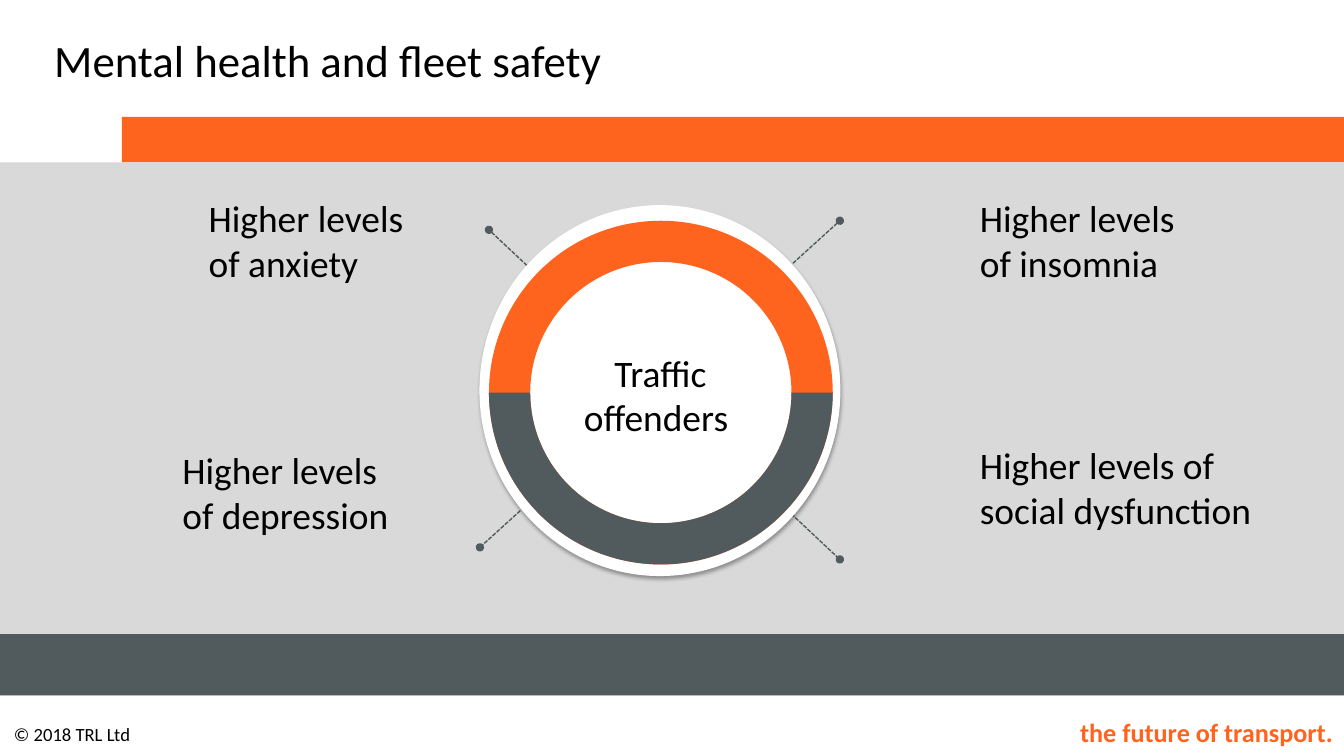
from lxml import etree
from pptx import Presentation
from pptx.dml.color import RGBColor
from pptx.enum.dml import MSO_LINE
from pptx.enum.shapes import MSO_CONNECTOR, MSO_SHAPE
from pptx.enum.text import MSO_ANCHOR, PP_ALIGN
from pptx.oxml import parse_xml
from pptx.oxml.ns import nsdecls, qn
from pptx.util import Inches, Pt

COLORS = {"orange": "FF641E", "slate": "515B5E", "grey": "D9D9D9",
          "white": "FFFFFF", "black": "000000"}

presentation = Presentation()
presentation.slide_width = Inches(13.33)
presentation.slide_height = Inches(7.5)
slide = presentation.slides.add_slide(presentation.slide_layouts[6])
percent_x = presentation.slide_width / 100
percent_y = presentation.slide_height / 100


def add_filled(kind, color, left, top, width, height):
    shape = slide.shapes.add_shape(
        kind, int(left * percent_x), int(top * percent_y),
        int(width * percent_x), int(height * percent_y))
    shape.shadow.inherit = False
    shape.fill.solid()
    shape.fill.fore_color.rgb = RGBColor.from_string(COLORS[color])
    shape.line.fill.background()
    return shape


def add_text(text, left, top, width, height, size=26.7, color="black",
             align=PP_ALIGN.LEFT, anchor=MSO_ANCHOR.TOP, bold=False):
    box = slide.shapes.add_textbox(
        int(left * percent_x), int(top * percent_y),
        int(width * percent_x), int(height * percent_y))
    frame = box.text_frame
    frame.word_wrap = True
    frame.vertical_anchor = anchor
    paragraph = frame.paragraphs[0]
    paragraph.text = text
    paragraph.alignment = align
    paragraph.font.name = "Calibri"
    paragraph.font.size = Pt(size)
    paragraph.font.bold = bold
    paragraph.font.color.rgb = RGBColor.from_string(COLORS[color])


add_text("the future of transport.", 78.17, 94.13, 21.76, 5.6, size=18.7,
         color="orange", align=PP_ALIGN.RIGHT, bold=True)
add_text("© 2018 TRL Ltd", 0.3, 94.93, 16.35, 4.4, size=13.3,
         anchor=MSO_ANCHOR.MIDDLE)

for color, left, top, height in [("orange", 9.08, 15.47, 6),
                                 ("grey", 0, 21.47, 70.53),
                                 ("slate", 0, 83.87, 8.13)]:
    add_filled(MSO_SHAPE.RECTANGLE, color, left, top, 100 - left, height)

add_text("Mental health and fleet safety", 3.3, 1.87, 74.87, 12, size=32,
         anchor=MSO_ANCHOR.MIDDLE)

for start_x, start_y, end_x, end_y in [(36.38, 30.4, 62.49, 74),
                                       (62.49, 29.2, 35.71, 72.4)]:
    spoke = slide.shapes.add_connector(
        MSO_CONNECTOR.STRAIGHT, int(start_x * percent_x), int(start_y * percent_y),
        int(end_x * percent_x), int(end_y * percent_y))
    spoke.line.color.rgb = RGBColor.from_string(COLORS["slate"])
    spoke.line.width = Pt(1)
    spoke.line.dash_style = MSO_LINE.SQUARE_DOT
    line_xml = spoke.line._get_or_add_ln()
    for end in ("a:headEnd", "a:tailEnd"):
        etree.SubElement(line_xml, qn(end), type="oval")
    etree.SubElement(spoke._element.spPr, qn("a:effectLst"))

disc = add_filled(MSO_SHAPE.OVAL, "white", 35.71, 27.2, 26.78, 48.93)
disc.line.color.rgb = RGBColor.from_string(COLORS["white"])
disc.line.width = Pt(0.75)
disc._element.spPr.find(qn("a:effectLst")).append(parse_xml(
    f'<a:outerShdw {nsdecls("a")} blurRad="{Pt(3.1)}" dist="{Pt(1.8)}" '
    f'dir="5400000" rotWithShape="0"><a:srgbClr val="{COLORS["black"]}">'
    '<a:alpha val="35000"/></a:srgbClr></a:outerShdw>'))

for color, start_angle in [("orange", 108), ("slate", 0.03)]:
    ring = add_filled(MSO_SHAPE.BLOCK_ARC, color, 36.38, 29.2, 25.58, 45.47)
    for index, value in enumerate((start_angle, 108, 0.12)):
        ring.adjustments[index] = value

add_text("Traffic offenders ", 41.11, 45.6, 16.05, 13.33, align=PP_ALIGN.CENTER)

for effect, left, top, width, height in [
        ("anxiety", 14.78, 25.2, 18.9, 19.33),
        ("depression", 12.83, 58.53, 18.9, 19.33),
        ("insomnia", 72.17, 25.2, 18.9, 31.33),
        ("social dysfunction", 72.17, 57.87, 22.66, 31.33)]:
    add_text(f"Higher levels of {effect}", left, top, width, height)

presentation.save("out.pptx")
